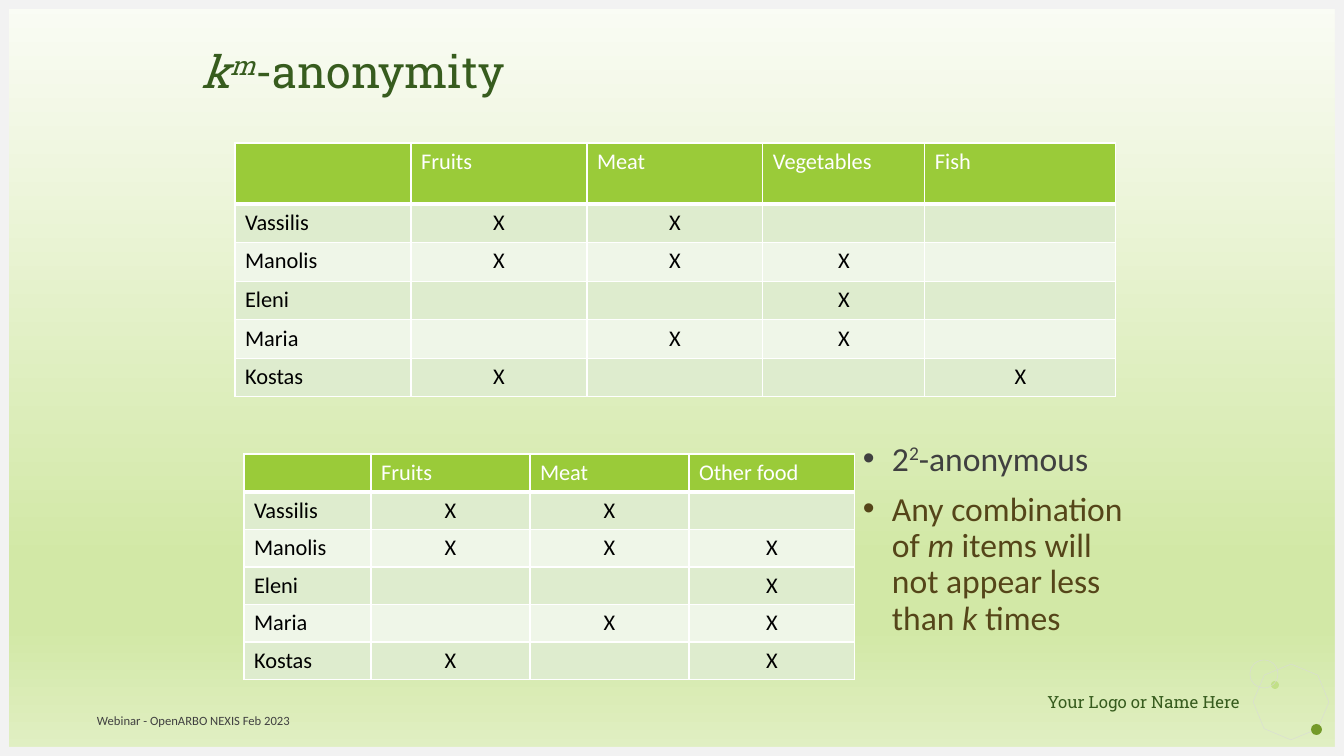
"""Build the k^m-anonymity slide with its two shopping tables."""
from lxml.etree import SubElement
from pptx import Presentation
from pptx.dml.color import RGBColor
from pptx.enum.shapes import MSO_SHAPE as SHAPE
from pptx.enum.text import MSO_ANCHOR as ANCHOR, MSO_AUTO_SIZE as AUTO, PP_ALIGN as ALIGN
from pptx.oxml.ns import qn
from pptx.util import Pt

WIDTH, HEIGHT = 1344, 756
SCALE = 12192000 / WIDTH
GREEN, WHITE, GREY, FRAME = "375C1E", "FFFFFF", "404040", "F2F2F2"
HEAD_FILL, BAND_FILLS = "9ACB39", ("DEECCE", "EFF6E8")
BACKGROUND = [(0, "FAFCF5"), (74, "D2E8A6"), (83, "D2E8A6"), (100, "E1EFC4")]

SLAB = {"name": "Roboto Slab", "color": GREEN}
TITLE = dict(SLAB, size=32)
BODY = {"name": "Calibri", "size": 24, "color": GREY}
BROWN = dict(BODY, color="554519")
CELL = {"name": "Calibri", "size": 16, "color": "000000"}

TITLE_RUNS = [("k", dict(TITLE, italic=True)),
              ("m", dict(TITLE, italic=True, baseline=30)),
              ("-anonymity", TITLE)]
BULLETS = [
    [("2", BODY), ("2", dict(BODY, baseline=30)), ("-anonymous", BODY)],
    [("Any combination of ", BROWN), ("m", dict(BROWN, italic=True)),
     (" items will not appear less than ", BROWN),
     ("k", dict(BROWN, italic=True)), (" times", BROWN)],
]
LABELS = [
    ((963, 692, 277, 20), "Your Logo or Name Here", dict(SLAB, size=12),
     ALIGN.RIGHT, ANCHOR.TOP),
    ((97, 701, 623, 40), "Webinar - OpenARBO NEXIS Feb 2023", dict(BODY, size=9),
     ALIGN.LEFT, ANCHOR.MIDDLE),
]
DECORATION = [
    (SHAPE.OCTAGON, (1256, 667, 70, 70), None, 22.7),
    (SHAPE.OVAL, (1271, 681, 8, 8), "C2E088", 0),
    (SHAPE.OVAL, (1311, 724, 11, 11), "749A29", 0),
    (SHAPE.OVAL, (1250, 660, 28, 28), None, 0),
    (SHAPE.RECTANGLE, (0, HEIGHT - 9, WIDTH, 9), FRAME, 0),
    (SHAPE.RECTANGLE, (0, 0, WIDTH, 9), FRAME, 0),
    (SHAPE.RECTANGLE, (0, 0, 9, HEIGHT), FRAME, 0),
    (SHAPE.RECTANGLE, (WIDTH - 9, 0, 9, HEIGHT), FRAME, 0),
]
TABLES = [
    {"at": (235, 143), "cols": (176, 176, 176, 162, 191), "head": 61, "height": 254,
     "rows": [("", "Fruits", "Meat", "Vegetables", "Fish"),
              ("Vassilis", "Χ", "Χ", "", ""),
              ("Manolis", "Χ", "Χ", "Χ", ""),
              ("Eleni", "", "", "Χ", ""),
              ("Maria", "", "Χ", "Χ", ""),
              ("Kostas", "Χ", "", "", "Χ")]},
    {"at": (244, 454), "cols": (127, 159, 159, 166), "head": 38, "height": 225,
     "rows": [("", "Fruits", "Meat", "Other food"),
              ("Vassilis", "Χ", "Χ", ""),
              ("Manolis", "X", "Χ", "X"),
              ("Eleni", "", "", "X"),
              ("Maria", "", "Χ", "X"),
              ("Kostas", "Χ", "", "X")]},
]


def px(n):
    return round(n * SCALE)


def rgb(value):
    return RGBColor.from_string(value)


def add_run(p, text, style):
    r = p.add_run()
    r.text = text
    for key, value in style.items():
        if key == "color":
            r.font.color.rgb = rgb(value)
        elif key == "baseline":
            r._r.get_or_add_rPr().set("baseline", str(value * 1000))
        else:
            setattr(r.font, key, Pt(value) if key == "size" else value)


def place(sp, box):
    for key, value in zip(("left", "top", "width", "height"), box):
        setattr(sp, key, px(value))


def setup_frame(tf, anchor):
    frame = {"margin_left": 0, "margin_top": 0, "margin_right": 0, "margin_bottom": 0,
             "word_wrap": True, "auto_size": AUTO.NONE, "vertical_anchor": anchor}
    for key, value in frame.items():
        setattr(tf, key, value)


def paint_background(s):
    fill = s.background.fill
    fill.gradient()
    fill.gradient_angle = 270
    stops = next(s.element.iter(qn("a:gsLst")))
    stops.clear()
    for pos, color in BACKGROUND:
        stop = SubElement(stops, qn("a:gs"), pos=str(pos * 1000))
        SubElement(stop, qn("a:srgbClr"), val=color)


def add_decoration(s, kind, box, fill, rotation):
    sp = s.shapes.add_shape(kind, *map(px, box))
    sp.shadow.inherit = False
    sp.rotation = rotation
    if fill:
        sp.fill.solid()
        sp.fill.fore_color.rgb = rgb(fill)
        sp.line.fill.background()
    else:
        sp.fill.background()
        sp.line.color.rgb = rgb("D9D9D9")
        sp.line.width = Pt(0.25)


def add_label(s, box, text, style, align, anchor):
    tf = s.shapes.add_textbox(*map(px, box)).text_frame
    setup_frame(tf, anchor)
    p = tf.paragraphs[0]
    p.alignment = align
    add_run(p, text, style)


def fill_cell(cell, text, is_head, is_name, band):
    tc_pr = cell._tc.get_or_add_tcPr()
    for side in "LRTB":
        width = Pt(3 if is_head and side == "B" else 1)
        line = SubElement(tc_pr, qn("a:ln" + side), w=str(width))
        SubElement(SubElement(line, qn("a:solidFill")), qn("a:srgbClr"), val=WHITE)
    cell.fill.solid()
    cell.fill.fore_color.rgb = rgb(HEAD_FILL if is_head else band)
    p = cell.text_frame.paragraphs[0]
    p.alignment = ALIGN.LEFT if is_head or is_name else ALIGN.CENTER
    if text:
        add_run(p, text, dict(CELL, color=WHITE) if is_head else CELL)
    else:
        SubElement(p._p, qn("a:endParaRPr"), sz=str(CELL["size"] * 100))


def add_food_table(s, spec_):
    rows, cols = spec_["rows"], spec_["cols"]
    box = (*spec_["at"], sum(cols), spec_["height"])
    table = s.shapes.add_table(len(rows), len(cols), *map(px, box)).table
    for col, width in zip(table.columns, cols):
        col.width = px(width)
    row_height = (spec_["height"] - spec_["head"]) / (len(rows) - 1)
    for i, row in enumerate(rows):
        table.rows[i].height = px(row_height if i else spec_["head"])
        for j, text in enumerate(row):
            fill_cell(table.cell(i, j), text, i == 0, j == 0, BAND_FILLS[(i - 1) % 2])


def main():
    prs = Presentation()
    prs.slide_width, prs.slide_height = px(WIDTH), px(HEIGHT)
    s = prs.slides.add_slide(prs.slide_layouts[1])
    paint_background(s)
    for item in DECORATION:
        add_decoration(s, *item)

    title, body = s.shapes.title, s.placeholders[1]
    place(title, (202, 32, 940, 84))
    place(body, (863, 442, 276, 231))
    setup_frame(title.text_frame, ANCHOR.MIDDLE)
    setup_frame(body.text_frame, ANCHOR.TOP)
    p = title.text_frame.paragraphs[0]
    p.alignment, p.line_spacing = ALIGN.LEFT, 0.9
    for run in TITLE_RUNS:
        add_run(p, *run)
    for i, runs in enumerate(BULLETS):
        tf = body.text_frame
        p = tf.add_paragraph() if i else tf.paragraphs[0]
        p.line_spacing, p.space_before = 0.9, Pt(10)
        p_pr = p._p.get_or_add_pPr()
        p_pr.set("marL", str(px(29)))
        p_pr.set("indent", str(px(-29)))
        for run in runs:
            add_run(p, *run)

    for label in LABELS:
        add_label(s, *label)
    for table in TABLES:
        add_food_table(s, table)
    prs.save("out.pptx")


if __name__ == "__main__":
    main()
